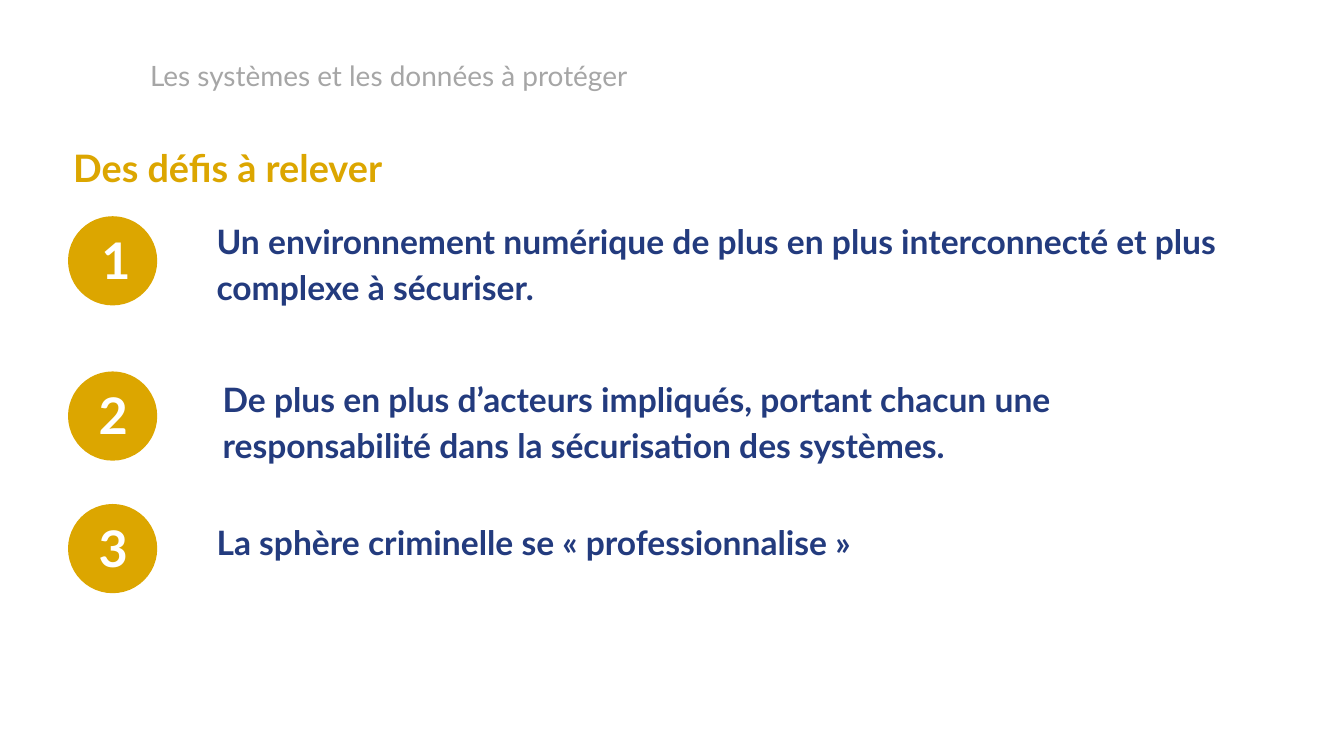
import pptx
import pptx.dml.color
import pptx.enum.shapes
import pptx.enum.text
import pptx.util

Inches = pptx.util.Inches
Anchor = pptx.enum.text.MSO_ANCHOR
HUES = {"gold": "DCA600", "navy": "233B7E", "grey": "A6A6A6", "white": "FFFFFF"}


class Deck:
    font = "Lato"
    disc = 1.77

    def __init__(self, slide):
        self.slide = slide

    def hue(self, name):
        return pptx.dml.color.RGBColor.from_string(HUES[name])

    def fill(self, shape, text, size, hue, bold=True, lead=None, pad=None, anchor=Anchor.TOP):
        frame = shape.text_frame
        frame.text = text
        frame.word_wrap = True
        frame.auto_size = pptx.enum.text.MSO_AUTO_SIZE.SHAPE_TO_FIT_TEXT
        frame.vertical_anchor = anchor
        if pad is not None:
            frame.margin_left = frame.margin_right = Inches(pad)
            frame.margin_top = frame.margin_bottom = Inches(pad)
        para = frame.paragraphs[0]
        para.alignment = pptx.enum.text.PP_ALIGN.LEFT
        if lead:
            para.line_spacing = lead
        para.font.name = self.font
        para.font.size = pptx.util.Pt(size)
        para.font.bold = bold
        para.font.color.rgb = self.hue(hue)

    def title(self, box, text):
        shape = self.slide.shapes.title
        shape.left, shape.top, shape.width, shape.height = map(Inches, box)
        self.fill(shape, text, 54, "gold", lead=1.14)

    def text(self, box, text, size, hue, **style):
        shape = self.slide.shapes.add_textbox(*map(Inches, box))
        self.fill(shape, text, size, hue, **style)

    def badge(self, left, top, label, shift):
        side = Inches(self.disc)
        oval = self.slide.shapes.add_shape(
            pptx.enum.shapes.MSO_SHAPE.OVAL, Inches(left), Inches(top), side, side)
        oval.shadow.inherit = False
        oval.fill.solid()
        oval.fill.fore_color.rgb = self.hue("gold")
        oval.line.fill.background()
        self.text((left + shift, top + 0.19, 1.36, 1.32), label, 72, "white",
                  pad=0.06, anchor=Anchor.MIDDLE)


def main():
    show = pptx.Presentation()
    show.slide_width, show.slide_height = Inches(26.67), Inches(15)
    deck = Deck(show.slides.add_slide(show.slide_layouts[5]))

    deck.text((2.88, 1.12, 13.34, 0.77), "Les systèmes et les données à protéger",
              40, "grey", bold=False)
    deck.title((1.35, 2.69, 23.54, 1.14), "Des défis à relever")

    goals = [
        (4.29, 0.6, (4.2, 4.22, 20.45, 1.86),
         "Un environnement numérique de plus en plus interconnecté et plus complexe à sécuriser."),
        (7.37, 0.55, (4.32, 7.35, 19.87, 1.86),
         "De plus en plus d’acteurs impliqués, portant chacun une responsabilité dans la sécurisation des systèmes."),
        (10, 0.55, (4.2, 10.19, 19.87, 0.94),
         "La sphère criminelle se « professionnalise »"),
    ]
    for rank, (top, shift, box, text) in enumerate(goals, 1):
        deck.badge(1.35, top, str(rank), shift)
        deck.text(box, text, 48, "navy", lead=1.14)

    show.save("out.pptx")


if __name__ == "__main__":
    main()
